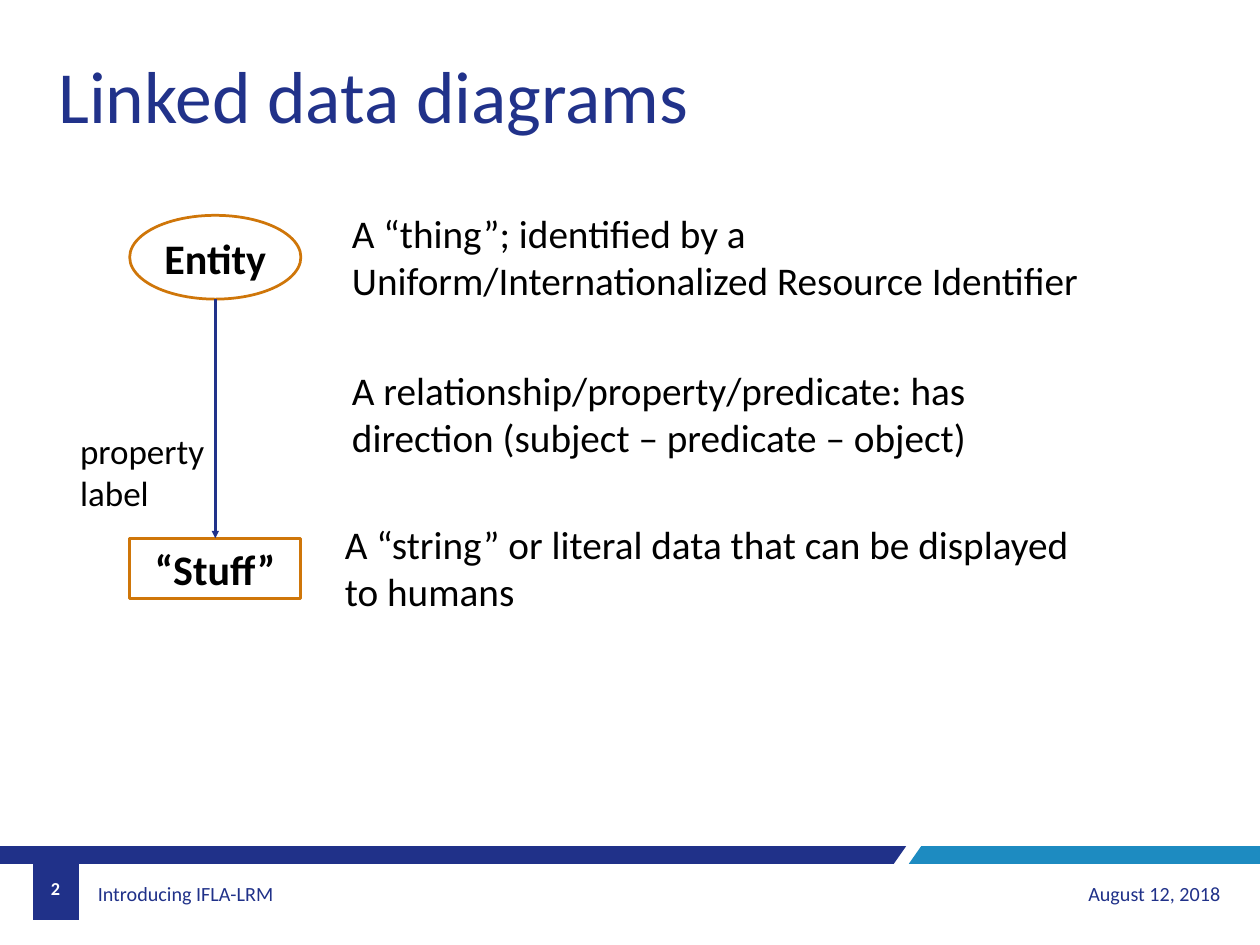
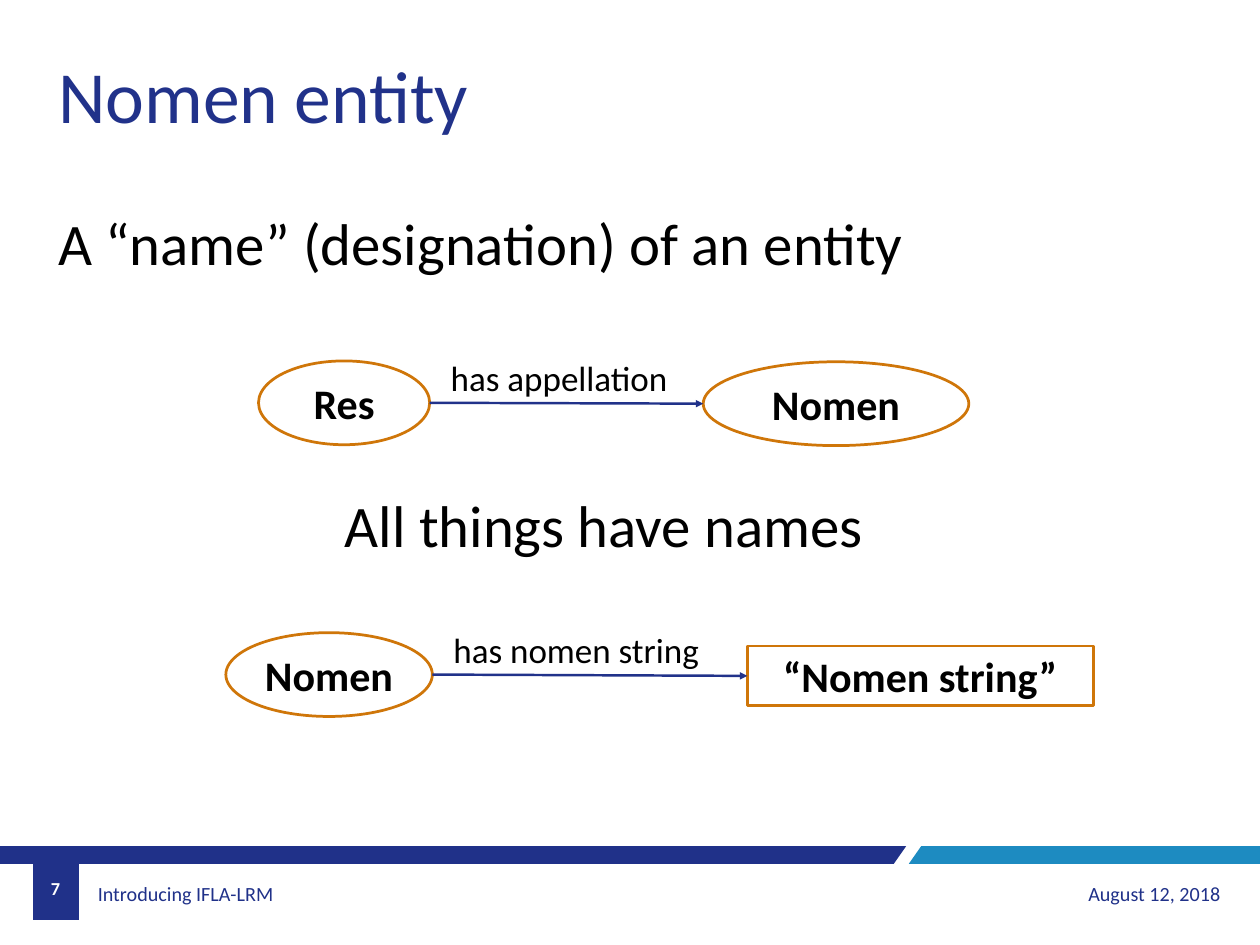
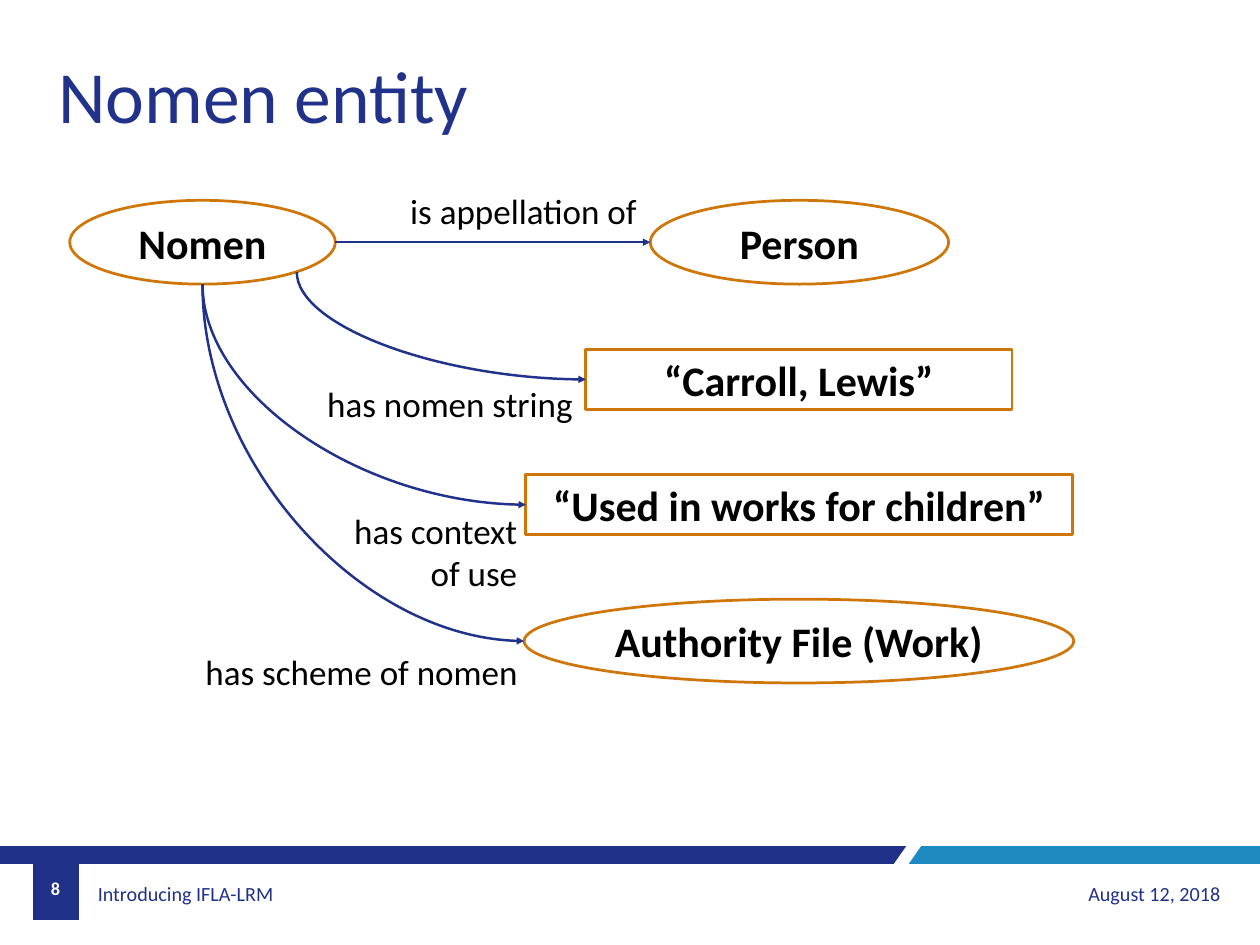
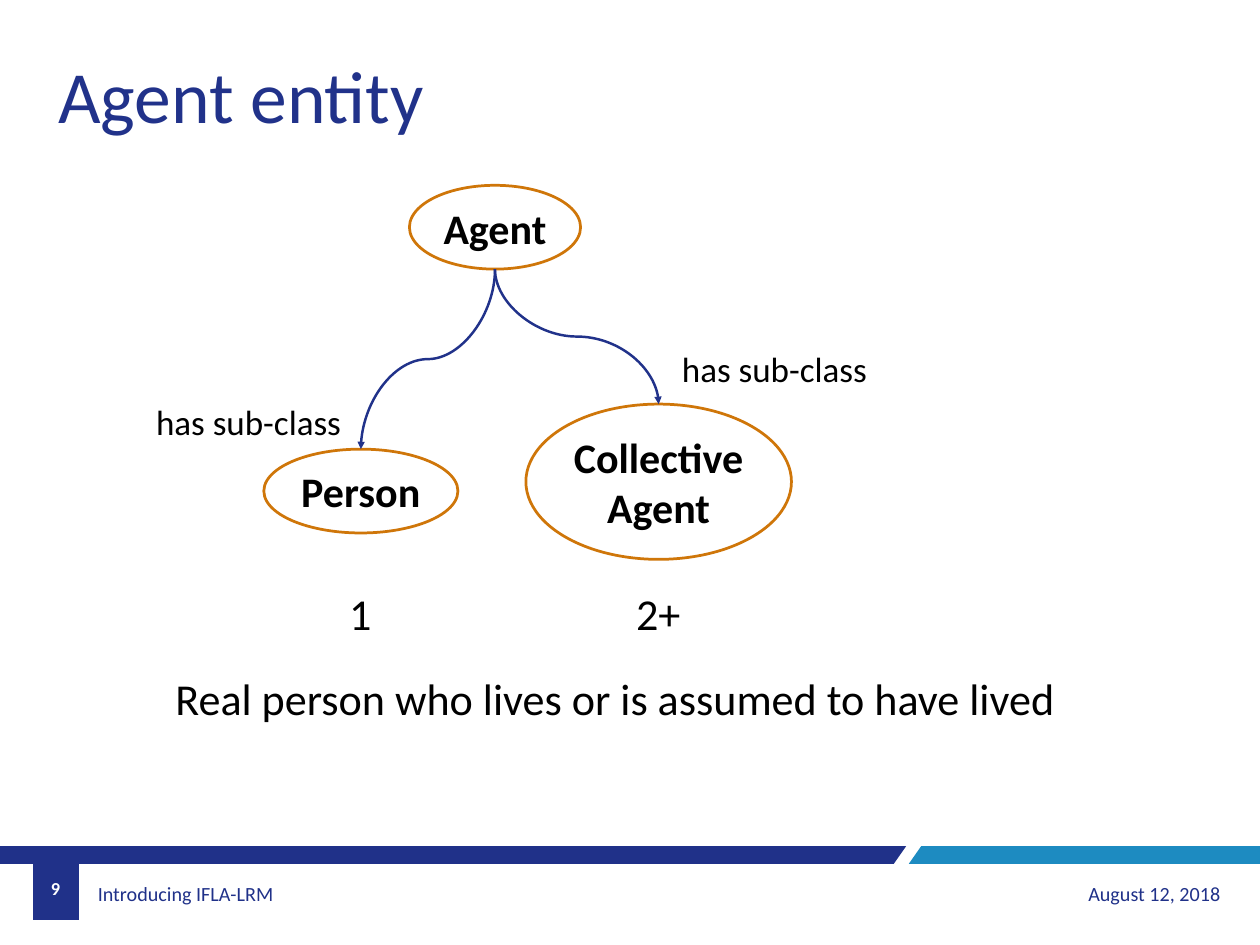
"""Build four slides on linked data diagrams and the IFLA-LRM nomen and agent entities."""
from lxml import etree
from pptx import Presentation
from pptx import util as u
from pptx.dml.color import RGBColor
from pptx.enum import shapes, text
from pptx.oxml.ns import qn

NAVY = RGBColor(0x20, 0x31, 0x89)
INK_BLUE = RGBColor(0x21, 0x32, 0x8A)
SKY = RGBColor(0x1D, 0x8B, 0xC1)
ORANGE = RGBColor(0xCF, 0x76, 0x09)
BLACK = RGBColor(0, 0, 0)
WHITE = RGBColor(255, 255, 255)
FONT = "Calibri"

LEFT, CENTER, RIGHT = text.PP_ALIGN.LEFT, text.PP_ALIGN.CENTER, text.PP_ALIGN.RIGHT
OVAL, BOX = shapes.MSO_SHAPE.OVAL, shapes.MSO_SHAPE.RECTANGLE
OVAL_HEIGHT, BOX_HEIGHT = 0.95, 0.68

SLIDE_WIDTH, SLIDE_HEIGHT = 14.28, 10.71
BAND_TOP, BAND_BOTTOM = 9.59, 9.79
BANDS = [
    (NAVY, [(0, BAND_TOP), (10.27, BAND_TOP), (10.13, BAND_BOTTOM), (0, BAND_BOTTOM)]),
    (SKY, [(10.44, BAND_TOP), (SLIDE_WIDTH, BAND_TOP),
           (SLIDE_WIDTH, BAND_BOTTOM), (10.3, BAND_BOTTOM)]),
    (NAVY, [(0.37, BAND_TOP), (0.89, BAND_TOP), (0.89, 10.43), (0.37, 10.43)]),
]
FOOTERS = [
    ("Introducing IFLA-LRM", (1.01, 9.85, 2.55, 0.55), LEFT),
    ("August 12, 2018", (10.27, 9.85, 3.66, 0.55), RIGHT),
]

TEXT_STYLES = {"label": (28.6, 1), "note": (32, 2), "caption": (36, 1), "lead": (48, 1)}
SIDES = {"top": (0, -1), "left": (-1, 0), "bottom": (0, 1), "right": (1, 0),
         "lower right": (0.71, 0.71)}
CONNECTION_SITES = {"top": 0, "left": 1, "bottom": 2, "right": 3}

SLIDES = [
    {
        "title": "Linked data diagrams", "number": 2,
        "nodes": {
            "entity": (OVAL, "Entity", 1.47, 2.44, 1.94),
            "stuff": (BOX, "“Stuff”", 1.47, 6.1, 1.94),
        },
        "links": [("entity", "bottom", "stuff", "top", "straight")],
        "texts": [
            ("note", "A “thing”; identified by a Uniform/Internationalized Resource Identifier",
             3.89, 2.32, 8.59, LEFT),
            ("note", "A relationship/property/predicate: has direction "
             "(subject – predicate – object)", 3.89, 4.1, 8.59, LEFT),
            ("note", "A “string” or literal data that can be displayed to humans",
             3.81, 5.85, 8.59, LEFT),
            ("label", "property\nlabel", 0.81, 4.82, 1.74, LEFT),
        ],
    },
    {
        "title": "Nomen entity", "number": 7,
        "nodes": {
            "res": (OVAL, "Res", 2.93, 4.09, 1.94),
            "nomen": (OVAL, "Nomen", 7.97, 4.1, 3.01),
            "named nomen": (OVAL, "Nomen", 2.56, 7.17, 2.34),
            "string": (BOX, "“Nomen string”", 8.47, 7.32, 3.92),
        },
        "links": [
            ("res", "right", "nomen", "left", "straight"),
            ("named nomen", "right", "string", "left", "straight"),
        ],
        "texts": [
            ("lead", "A “name” (designation) of an entity", 0.56, 2.29, 10.3, LEFT),
            ("lead", "All things have names", 3.81, 5.49, 6.26, LEFT),
            ("label", "has appellation", 5.01, 3.99, 2.68, LEFT),
            ("label", "has nomen string", 5.04, 7.07, 3.01, LEFT),
        ],
    },
    {
        "title": "Nomen entity", "number": 8,
        "nodes": {
            "nomen": (OVAL, "Nomen", 0.79, 2.27, 3.01),
            "person": (OVAL, "Person", 7.37, 2.27, 3.38),
            "name": (BOX, "“Carroll, Lewis”", 6.64, 3.96, 4.83),
            "context": (BOX, "“Used in works for children”", 5.96, 5.38, 6.2),
            "scheme": (OVAL, "Authority File (Work)", 5.94, 6.79, 6.23),
        },
        "links": [
            ("nomen", "right", "person", "left", "straight"),
            ("nomen", "lower right", "name", "left", "curvedConnector2"),
            ("nomen", "bottom", "context", "left", "curvedConnector2"),
            ("nomen", "bottom", "scheme", "left", "curvedConnector2"),
        ],
        "texts": [
            ("label", "is appellation of", 4.55, 2.1, 2.79, LEFT),
            ("label", "has nomen string", 3.61, 4.29, 3.01, LEFT),
            ("label", "has context\nof use", 3.89, 5.72, 2.07, RIGHT),
            ("label", "has scheme of nomen", 2.23, 7.32, 3.77, LEFT),
        ],
    },
    {
        "title": "Agent entity", "number": 9,
        "nodes": {
            "agent": (OVAL, "Agent", 4.64, 2.1, 1.94),
            "person": (OVAL, "Person", 2.99, 5.09, 2.2),
            "collective": (OVAL, "Collective\nAgent", 5.96, 4.58, 3.01, 1.76),
        },
        "links": [
            ("agent", "bottom", "person", "top", "curvedConnector3"),
            ("agent", "bottom", "collective", "top", "curvedConnector3"),
        ],
        "texts": [
            ("label", "has sub-class", 1.67, 4.49, 2.31, LEFT),
            ("label", "has sub-class", 7.63, 3.89, 2.31, LEFT),
            ("caption", "1", 3.86, 6.6, 0.5, LEFT),
            ("caption", "2+", 7.11, 6.6, 0.75, LEFT),
            ("caption", "Real person who lives or is assumed to have lived",
             1.89, 7.56, 10.26, LEFT),
        ],
    },
]


def write_text(shape, content, size, color=BLACK, alignment=LEFT, bold=False,
               anchor=text.MSO_ANCHOR.TOP, wrap=True):
    """Fill a shape with text in one format."""
    frame = shape.text_frame
    frame.text = content
    frame.word_wrap = wrap
    frame.auto_size = text.MSO_AUTO_SIZE.NONE
    frame.vertical_anchor = anchor
    for paragraph in frame.paragraphs:
        paragraph.alignment = alignment
        for run in paragraph.runs:
            run.font.name, run.font.size = FONT, u.Pt(size)
            run.font.bold, run.font.color.rgb = bold, color


def add_text(slide, content, box, size, **style):
    """Add a text box at a place given in inches."""
    shape = slide.shapes.add_textbox(*map(u.Inches, box))
    write_text(shape, content, size, **style)
    return shape


def add_band(slide, color, corners):
    """Add a filled outline through the corners."""
    points = [(u.Inches(x), u.Inches(y)) for x, y in corners]
    builder = slide.shapes.build_freeform(*points[0], scale=1.0)
    builder.add_line_segments(points[1:], close=True)
    band = builder.convert_to_shape()
    band.shadow.inherit = False
    band.fill.solid()
    band.fill.fore_color.rgb = color
    band.line.fill.background()
    return band


def dress_layout(layout, slide):
    """Place the title and move the bands and footers into the layout."""
    for placeholder in list(layout.placeholders):
        if placeholder.placeholder_format.type == shapes.PP_PLACEHOLDER.TITLE:
            placeholder.left, placeholder.top = u.Inches(0.56), u.Inches(0.52)
            placeholder.width, placeholder.height = u.Inches(13.2), u.Inches(1.11)
        else:
            layout.shapes.element.remove(placeholder.element)
    shared = [add_band(slide, color, corners) for color, corners in BANDS]
    shared += [add_text(slide, content, box, 16.4, color=NAVY, alignment=alignment,
                        anchor=text.MSO_ANCHOR.MIDDLE)
               for content, box, alignment in FOOTERS]
    for shape in shared:
        layout.shapes.element.append(shape.element)


def add_node(slide, kind, content, left, top, width, height=None):
    """Add an outlined oval or box with a bold label."""
    height = height or (OVAL_HEIGHT if kind == OVAL else BOX_HEIGHT)
    node = slide.shapes.add_shape(kind, *map(u.Inches, (left, top, width, height)))
    node.shadow.inherit = False
    node.fill.background()
    node.line.color.rgb = ORANGE
    node.line.width = u.Pt(2.25)
    write_text(node, content, 34.3, alignment=CENTER, bold=True,
               anchor=text.MSO_ANCHOR.MIDDLE, wrap=False)
    return node


def side_point(node, side):
    """Return the point of a node's outline on the named side."""
    across, down = SIDES[side]
    return (int(node.left + node.width * (1 + across) / 2),
            int(node.top + node.height * (1 + down) / 2))


def add_link(slide, source, source_side, target, target_side, route):
    """Add an arrow; a curved route leaves its source vertically."""
    x1, y1 = side_point(source, source_side)
    x2, y2 = side_point(target, target_side)
    if route == "straight":
        link = slide.shapes.add_connector(shapes.MSO_CONNECTOR.STRAIGHT, x1, y1, x2, y2)
        if target.auto_shape_type == BOX:
            link.end_connect(target, CONNECTION_SITES[target_side])
    else:
        length, breadth = y2 - y1, abs(x2 - x1)
        left, top = (x1 + x2 - length) // 2, (y1 + y2 - breadth) // 2
        link = slide.shapes.add_connector(
            shapes.MSO_CONNECTOR.CURVE, left, top, left + length, top + breadth)
        frame = link.element.spPr.find(qn("a:xfrm"))
        frame.set("rot", "16200000" if x2 > x1 else "5400000")
        if x2 > x1:
            frame.set("flipH", "1")
        link.element.spPr.find(qn("a:prstGeom")).set("prst", route)
    link.line.color.rgb = INK_BLUE
    link.line.width = u.Pt(2)
    properties = link.element.spPr
    etree.SubElement(properties.find(qn("a:ln")), qn("a:tailEnd"), type="triangle")
    etree.SubElement(properties, qn("a:effectLst"))


def fill_slide(slide, content):
    """Add one slide's title, number, diagram and texts."""
    write_text(slide.shapes.title, content["title"], 60, color=INK_BLUE)
    add_text(slide, str(content["number"]), (0.37, 9.79, 0.52, 0.55), 14.9, color=WHITE,
             alignment=CENTER, bold=True, anchor=text.MSO_ANCHOR.MIDDLE)
    nodes = {name: add_node(slide, *node) for name, node in content["nodes"].items()}
    for source, source_side, target, target_side, route in content["links"]:
        add_link(slide, nodes[source], source_side, nodes[target], target_side, route)
    for style, words, left, top, width, alignment in content["texts"]:
        size, lines = TEXT_STYLES[style]
        height = 0.1 + (lines + words.count("\n")) * size / 60
        add_text(slide, words, (left, top, width, height), size, alignment=alignment)


def main():
    """Build and save the presentation."""
    presentation = Presentation()
    presentation.slide_width = u.Inches(SLIDE_WIDTH)
    presentation.slide_height = u.Inches(SLIDE_HEIGHT)
    layout = presentation.slide_layouts.get_by_name("Title Only")
    slides = [presentation.slides.add_slide(layout) for _ in SLIDES]
    dress_layout(layout, slides[0])
    for slide, content in zip(slides, SLIDES):
        fill_slide(slide, content)
    presentation.save("out.pptx")


if __name__ == "__main__":
    main()
